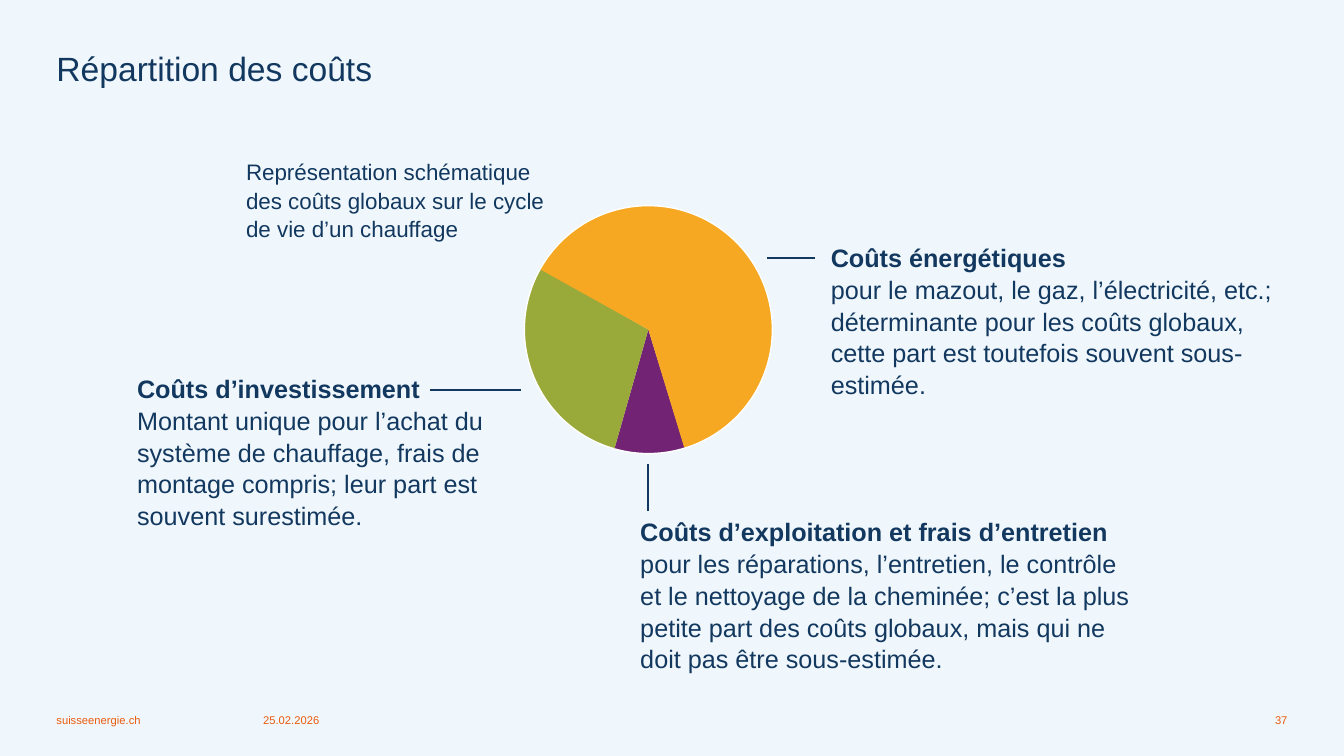
from pptx import Presentation
from pptx.dml.color import RGBColor
from pptx.enum.shapes import MSO_CONNECTOR, MSO_SHAPE
from pptx.enum.text import MSO_ANCHOR, MSO_AUTO_SIZE, PP_ALIGN
from pptx.oxml.ns import qn
from pptx.util import Inches, Pt
from lxml import etree

TOP, BOTTOM = MSO_ANCHOR.TOP, MSO_ANCHOR.BOTTOM
LEFT, RIGHT = PP_ALIGN.LEFT, PP_ALIGN.RIGHT
FIXED, GROW = MSO_AUTO_SIZE.NONE, MSO_AUTO_SIZE.SHAPE_TO_FIT_TEXT
STRAIGHT, ARC = MSO_CONNECTOR.STRAIGHT, MSO_SHAPE.ARC

THEME = {
    "font": "Arial",
    "background": RGBColor.from_string("F0F7FC"),
    "ink": RGBColor.from_string("12385F"),
    "accent": RGBColor.from_string("EA5B0C"),
    "rim": RGBColor.from_string("FFFFFF"),
    "operation": RGBColor.from_string("732373"),
    "investment": RGBColor.from_string("99A93A"),
    "energy": RGBColor.from_string("F7A823"),
    "title": Pt(24),
    "body": Pt(18),
    "caption": Pt(16),
    "footer": Pt(8),
}

prs = Presentation()
prs.slide_width, prs.slide_height = Inches(13.33), Inches(7.5)
COL, ROW = prs.slide_width / 133.3, prs.slide_height / 75


def grid(*cells):
    return [round(n * (ROW if i % 2 else COL)) for i, n in enumerate(cells)]


def write(sp, lines, size, color="ink", spacing=1.05, align=LEFT, **frame):
    tf = sp.text_frame
    values = {"word_wrap": True, "auto_size": FIXED, "vertical_anchor": TOP,
              "margin_left": 0, "margin_right": 0, "margin_top": 0, "margin_bottom": 0}
    for name, value in (values | frame).items():
        setattr(tf, name, value)
    for i, line in enumerate(lines):
        p = tf.add_paragraph() if i else tf.paragraphs[0]
        p.alignment, p.line_spacing = align, spacing
        r = p.add_run()
        r.text = line
        bold = len(lines) > 1 and i == 0
        for name, value in {"name": THEME["font"], "size": THEME[size], "bold": bold}.items():
            setattr(r.font, name, value)
        r.font.color.rgb = THEME[color]


s = prs.slides.add_slide(prs.slide_layouts[5])
s.background.fill.solid()
s.background.fill.fore_color.rgb = THEME["background"]

title = s.shapes.title
title.left, title.top, title.width, title.height = grid(5.6, 4.8, 41.7, 8.7)
write(title, ["Répartition des coûts"], "title", spacing=1.0)

footers = [
    ("37", 116, 11.7, RIGHT),
    ("25.02.2026", 26.1, 16.6, LEFT),
    ("suisseenergie.ch", 5.6, 19.7, LEFT),
]
for text, left, width, align in footers:
    sp = s.shapes.add_textbox(*grid(left, 70.6, width, 1.5))
    write(sp, [text], "footer", "accent", 1.0, align, vertical_anchor=BOTTOM)

leaders = [(42.7, 38.7, 51.7, 38.7), (76.1, 25.6, 80.8, 25.6), (64.3, 50.7, 64.3, 46)]
for ends in leaders:
    line = s.shapes.add_connector(STRAIGHT, *grid(*ends))
    line.line.color.rgb = THEME["ink"]
    line.line.width = Pt(1.5)
    etree.SubElement(line._element.spPr, qn("a:effectLst"))

notes = [
    ((82.4, 23.9, 45, 15.1), "body", [
        "Coûts énergétiques",
        "pour le mazout, le gaz, l’électricité, etc.; déterminante pour les coûts globaux, "
        "cette part est toutefois souvent sous-estimée."]),
    ((13.6, 36.9, 35.4, 15.1), "body", [
        "Coûts d’investissement",
        "Montant unique pour l’achat du système de chauffage, frais de montage compris; "
        "leur part est souvent surestimée."]),
    ((63.5, 51.1, 48.8, 15.1), "body", [
        "Coûts d’exploitation et frais d’entretien",
        "pour les réparations, l’entretien, le contrôle et le nettoyage de la cheminée; "
        "c’est la plus petite part des coûts globaux, mais qui ne doit pas être sous-estimée."]),
    ((24.4, 15.6, 31.8, 8.1), "caption", [
        "Représentation schématique des coûts globaux sur le cycle de vie d’un chauffage"]),
]
for cells, size, lines in notes:
    write(s.shapes.add_textbox(*grid(*cells)), lines, size, auto_size=GROW)

PIE_TURN = 129.6
DEGREE = 60000 / 100000
slices = [("operation", 303.3, 336.3), ("investment", 336.3, 80), ("energy", 79.5, 303.5)]
pie = s.shapes.add_group_shape()
for color, start, end in slices:
    sp = pie.shapes.add_shape(ARC, *grid(52, 20.4, 24.6, 24.6))
    sp.adjustments[0], sp.adjustments[1] = start * DEGREE, end * DEGREE
    sp.rotation = PIE_TURN
    sp.shadow.inherit = False
    sp.fill.solid()
    sp.fill.fore_color.rgb = THEME[color]
    sp.line.color.rgb = THEME["rim"]
    sp.line.width = Pt(1)

prs.save("out.pptx")
